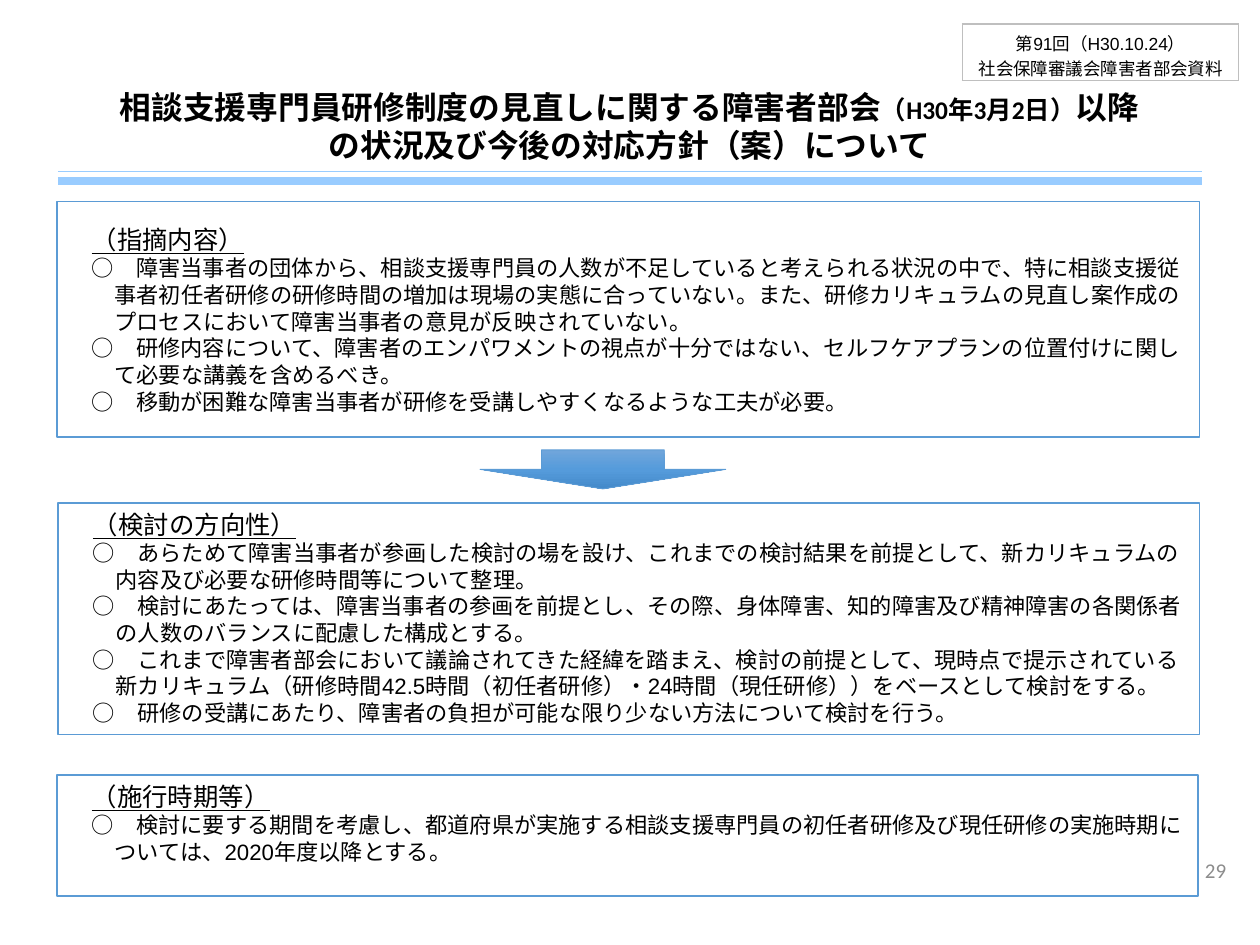
from copy import deepcopy
from dataclasses import dataclass

from pptx import Presentation
from pptx.dml.color import RGBColor
from pptx.enum import shapes, text
from pptx.oxml.ns import qn
from pptx.oxml.xmlchemy import OxmlElement
from pptx.util import Inches, Pt


@dataclass(frozen=True)
class Theme:
    white: str = "FFFFFF"
    ink: str = "000000"
    number: str = "8C8C8C"
    border: str = "5B9BD5"
    rule: str = "99CCFF"
    table_border: str = "BFBFBF"
    arrow: tuple = ((0, "71A6DB"), (0.5, "559BDB"), (1, "448ACA"))
    latin: str = "Calibri"
    body_font: str = "Arial"
    cjk: str = "Noto Sans CJK JP"
    title_size: float = 18.1
    heading_size: float = 14.5
    body_size: float = 12.7
    number_size: float = 12
    label_size: float = 10


@dataclass(frozen=True)
class Style:
    size: float
    font: str
    color: str = Theme.ink
    bold: bool = False
    underline: bool = False


@dataclass(frozen=True)
class Panel:
    left: float
    top: float
    width: float
    height: float
    anchor: text.MSO_ANCHOR
    heading: str
    items: tuple[str, ...]


T = Theme()
TITLE = Style(T.title_size, T.latin, bold=True)
TITLE_DATE = Style(T.heading_size, T.latin, bold=True)
HEADING = Style(T.heading_size, T.cjk, underline=True)
BODY = Style(T.body_size, T.body_font)
NUMBER = Style(T.number_size, T.latin, T.number)
LABEL_DATE = Style(T.label_size, T.body_font)
LABEL = Style(T.label_size, T.latin)

PANELS = (
    Panel(0.45, 1.6, 9.07, 1.87, text.MSO_ANCHOR.MIDDLE, "（指摘内容）", (
        "障害当事者の団体から、相談支援専門員の人数が不足していると考えられる状況の中で、特に相談支援従事者初任者研修の研修時間の増加は現場の実態に合っていない。また、研修カリキュラムの見直し案作成のプロセスにおいて障害当事者の意見が反映されていない。",
        "研修内容について、障害者のエンパワメントの視点が十分ではない、セルフケアプランの位置付けに関して必要な講義を含めるべき。",
        "移動が困難な障害当事者が研修を受講しやすくなるような工夫が必要。",
    )),
    Panel(0.46, 3.99, 9.06, 1.84, text.MSO_ANCHOR.TOP, "（検討の方向性）", (
        "あらためて障害当事者が参画した検討の場を設け、これまでの検討結果を前提として、新カリキュラムの内容及び必要な研修時間等について整理。",
        "検討にあたっては、障害当事者の参画を前提とし、その際、身体障害、知的障害及び精神障害の各関係者の人数のバランスに配慮した構成とする。",
        "これまで障害者部会において議論されてきた経緯を踏まえ、検討の前提として、現時点で提示されている新カリキュラム（研修時間42.5時間（初任者研修）・24時間（現任研修））をベースとして検討をする。",
        "研修の受講にあたり、障害者の負担が可能な限り少ない方法について検討を行う。",
    )),
    Panel(0.45, 6.15, 9.06, 0.96, text.MSO_ANCHOR.TOP, "（施行時期等）", (
        "検討に要する期間を考慮し、都道府県が実施する相談支援専門員の初任者研修及び現任研修の実施時期については、2020年度以降とする。",
    )),
)


def rgb(color: str) -> RGBColor:
    return RGBColor.from_string(color)


def add_run(p, content: str, style: Style) -> None:
    r = p.add_run()
    r.text = content
    f = r.font
    f.size, f.bold, f.underline = Pt(style.size), style.bold, style.underline
    f.color.rgb = rgb(style.color)
    f.name = style.font
    ea = OxmlElement("a:ea")
    ea.set("typeface", T.cjk)
    f._element.append(ea)


def write(tf, paragraphs, align, pitch: float = 1.2, hanging: bool = False) -> None:
    """Fill a frame; each paragraph is a list of (text, style), pitch is line height over type size."""
    tf.word_wrap = True
    for i, runs in enumerate(paragraphs):
        p = tf.add_paragraph() if i else tf.paragraphs[0]
        p.alignment = align
        p.line_spacing = Pt(round(max(style.size for _, style in runs) * pitch, 2))
        if hanging:
            pPr = p._p.get_or_add_pPr()
            pPr.set("marL", str(Inches(0.36)))
            pPr.set("indent", str(Inches(-0.18)))
        for content, style in runs:
            add_run(p, content, style)


def add_box(slide, left, top, width, height, line: str, anchor):
    sp = slide.shapes.add_shape(shapes.MSO_SHAPE.RECTANGLE, Inches(left), Inches(top),
                                Inches(width), Inches(height))
    sp.shadow.inherit = False
    sp.fill.solid()
    sp.fill.fore_color.rgb = rgb(T.white)
    sp.line.color.rgb = rgb(line)
    sp.line.width = Pt(1)
    sp.text_frame.vertical_anchor = anchor
    return sp


def add_panel(slide, panel: Panel) -> None:
    sp = add_box(slide, panel.left, panel.top, panel.width, panel.height, T.border, panel.anchor)
    paragraphs = [[(panel.heading, HEADING)]]
    paragraphs += [[("○　" + item, BODY)] for item in panel.items]
    write(sp.text_frame, paragraphs, text.PP_ALIGN.LEFT, hanging=True)


def add_rule(slide, y: float, weight: float) -> None:
    line = slide.shapes.add_connector(shapes.MSO_CONNECTOR.STRAIGHT, Inches(0.46), Inches(y),
                                      Inches(9.54), Inches(y))
    line.line.color.rgb = rgb(T.rule)
    line.line.width = Pt(weight)
    line._element.spPr.append(OxmlElement("a:effectLst"))


def add_arrow(slide) -> None:
    sp = slide.shapes.add_shape(shapes.MSO_SHAPE.DOWN_ARROW, Inches(3.81), Inches(3.57),
                                Inches(1.95), Inches(0.31))
    sp.shadow.inherit = False
    sp.line.color.rgb = rgb(T.border)
    sp.line.width = Pt(0.5)
    sp.fill.gradient()
    sp.fill.gradient_angle = 270
    stops = sp._element.spPr.find(".//" + qn("a:gsLst"))
    stops.insert(1, deepcopy(stops[0]))
    for stop, (position, color) in zip(sp.fill.gradient_stops, T.arrow):
        stop.position = position
        stop.color.rgb = rgb(color)


def add_border(cell, side: str) -> None:
    ln = OxmlElement(f"a:{side}")
    ln.set("w", str(Pt(1)))
    fill, color = OxmlElement("a:solidFill"), OxmlElement("a:srgbClr")
    color.set("val", T.table_border)
    fill.append(color)
    ln.append(fill)
    cell._tc.get_or_add_tcPr().append(ln)


def add_meeting_label(slide) -> None:
    table = slide.shapes.add_table(1, 1, Inches(7.64), Inches(0.19), Inches(2.19), Inches(0.45)).table
    table.first_row = table.horz_banding = False
    cell = table.cell(0, 0)
    for side in ("lnL", "lnR", "lnT", "lnB"):
        add_border(cell, side)
    cell.fill.background()
    cell.margin_top, cell.margin_bottom = Inches(0.05), 0
    cell.vertical_anchor = text.MSO_ANCHOR.MIDDLE
    write(cell.text_frame, [[("第91回（H30.10.24）", LABEL_DATE)],
                            [("社会保障審議会障害者部会資料", LABEL)]],
          text.PP_ALIGN.CENTER, pitch=1.42)


def main() -> None:
    prs = Presentation()
    prs.slide_width, prs.slide_height = Inches(10), Inches(7.5)
    slide = prs.slides.add_slide(prs.slide_layouts[6])

    title = add_box(slide, 0.47, 0.64, 9.05, 0.72, T.white, text.MSO_ANCHOR.MIDDLE)
    write(title.text_frame, [
        [("相談支援専門員研修制度の見直しに関する障害者部会", TITLE),
         ("（H30年3月2日）", TITLE_DATE), ("以降", TITLE)],
        [("の状況及び今後の対応方針（案）について", TITLE)],
    ], text.PP_ALIGN.CENTER)
    add_rule(slide, 1.36, 0.5)
    add_rule(slide, 1.44, 4.5)
    for panel in PANELS:
        add_panel(slide, panel)
    add_arrow(slide)

    number = slide.shapes.add_textbox(Inches(7.5), Inches(6.73), Inches(2.33), Inches(0.36))
    number.text_frame.vertical_anchor = text.MSO_ANCHOR.MIDDLE
    write(number.text_frame, [[("29", NUMBER)]], text.PP_ALIGN.RIGHT)
    add_meeting_label(slide)
    prs.save("out.pptx")


if __name__ == "__main__":
    main()
